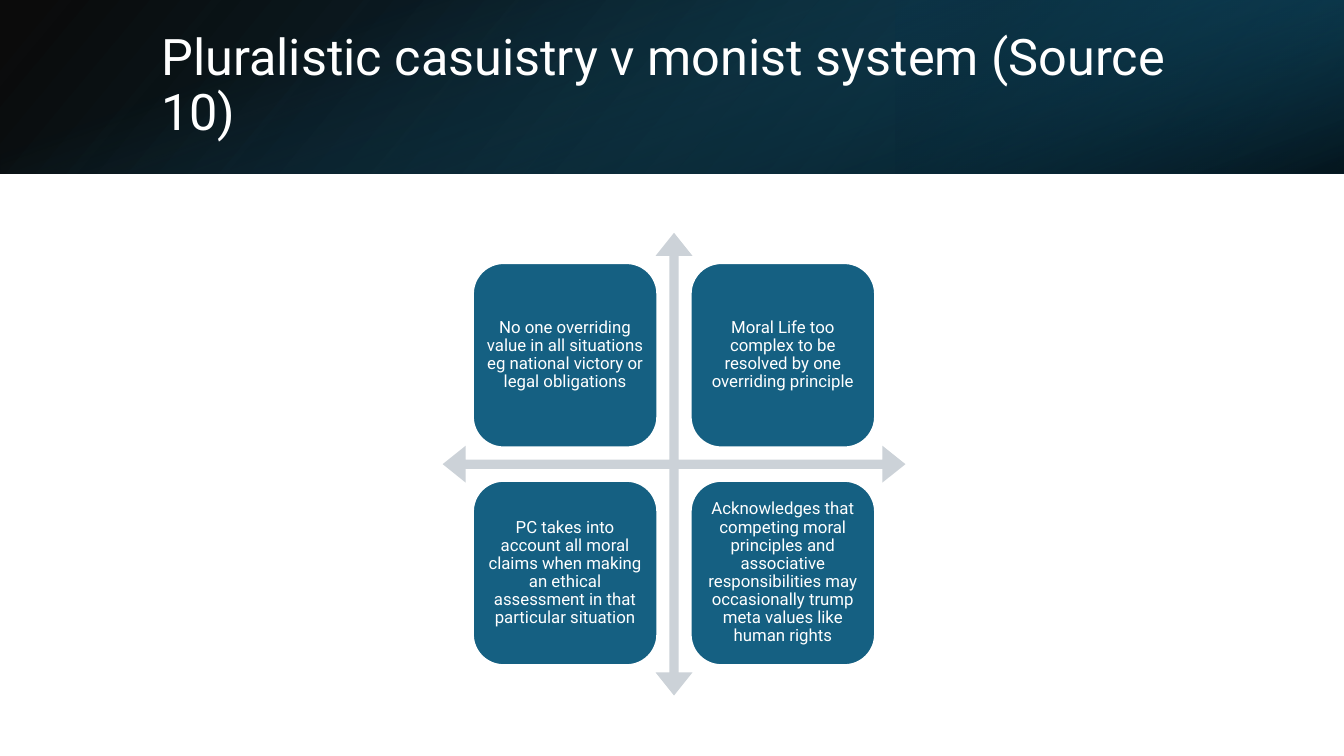
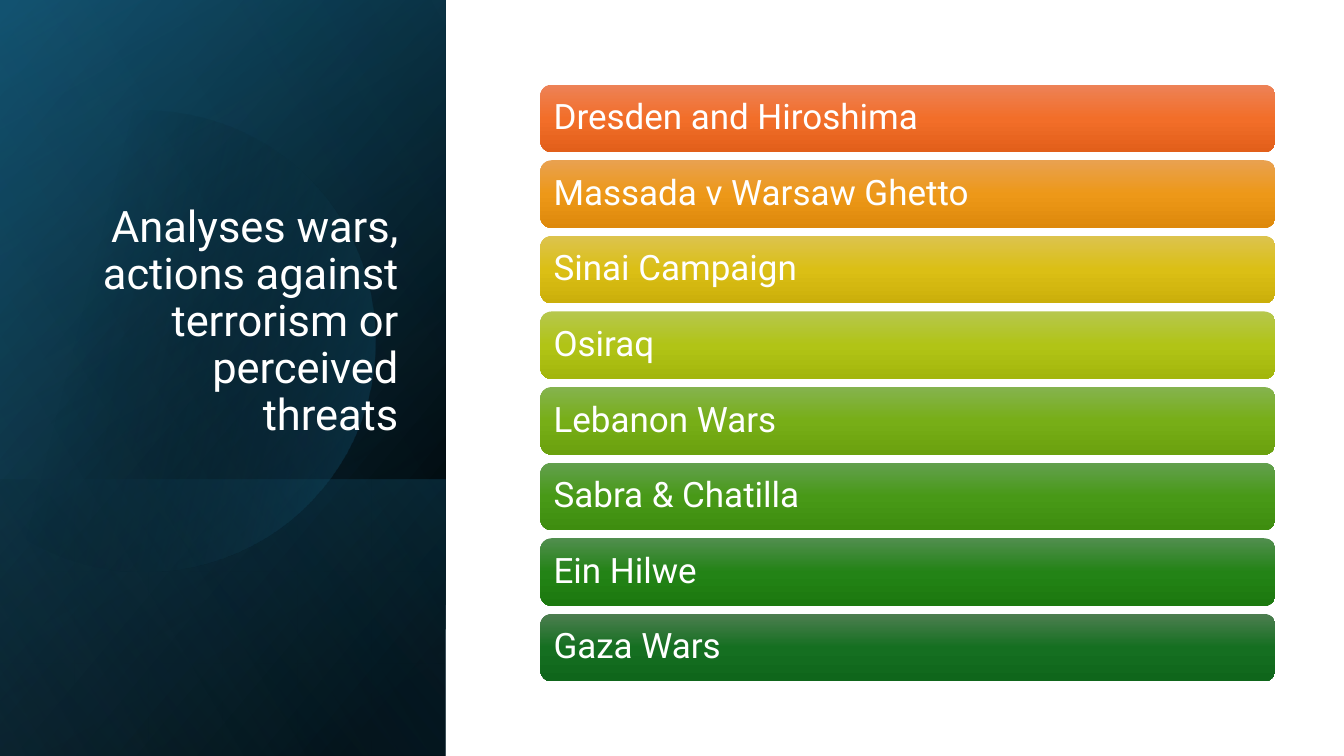
import pptx
import pptx.dml.color
import pptx.enum.shapes
import pptx.enum.text
import pptx.oxml
import pptx.oxml.ns
import pptx.util

Inches = pptx.util.Inches
Pt = pptx.util.Pt
PRESET = pptx.enum.shapes.MSO_SHAPE
ALIGN = pptx.enum.text.PP_ALIGN
ANCHOR = pptx.enum.text.MSO_ANCHOR

# Shared look
SLIDE_W, SLIDE_H = 13.33, 7.5
FONT = "Roboto"
WHITE, BLACK = "FFFFFF", "000000"
TEAL, DEEP_TEAL, NIGHT, SKY = "156082", "104862", "0B3041", "46B1E1"
ARROW_GREY = "CCD2D8"
TITLE_ONLY = 5


def rgb(hex_color):
    return pptx.dml.color.RGBColor.from_string(hex_color)


def apply_gradient(shape, stops, angle):
    """Fill with stops of (position %, colour[, opacity %])."""
    stops_xml = ""
    for position, color, *opacity in stops:
        alpha = f'<a:alpha val="{opacity[0] * 1000}"/>' if opacity else ""
        stops_xml += (f'<a:gs pos="{position * 1000}">'
                      f'<a:srgbClr val="{color}">{alpha}</a:srgbClr></a:gs>')
    gradient = pptx.oxml.parse_xml(
        f'<a:gradFill {pptx.oxml.ns.nsdecls("a")}><a:gsLst>{stops_xml}</a:gsLst>'
        f'<a:lin ang="{angle * 60000}" scaled="0"/></a:gradFill>')
    shape.fill.background()
    properties = shape.element.spPr
    properties.replace(properties.find(pptx.oxml.ns.qn("a:noFill")), gradient)


def strip_style(shape):
    shape.shadow.inherit = False
    shape.line.fill.background()


def add_preset(slide, preset, box):
    shape = slide.shapes.add_shape(preset, *map(Inches, box))
    strip_style(shape)
    return shape


def add_panel(slide, box, stops, angle, turn=0, flip=True):
    """Gradient rectangle covering box once it has been turned."""
    left, top, width, height = box
    if turn == 90:
        center_x, center_y = left + width / 2, top + height / 2
        width, height = height, width
        left, top = center_x - width / 2, center_y - height / 2
    panel = add_preset(slide, PRESET.RECTANGLE, (left, top, width, height))
    panel.rotation = turn
    if flip:
        panel.element.spPr.xfrm.set("flipH", "1")
    apply_gradient(panel, stops, angle)


def set_text(shape, text, size, align, anchor, inset=0.1):
    frame = shape.text_frame
    frame.text = text
    paragraph = frame.paragraphs[0]
    margins = dict.fromkeys(
        ("margin_left", "margin_top", "margin_right", "margin_bottom"), Inches(inset))
    formats = (
        (frame, {"word_wrap": True, "vertical_anchor": anchor,
                 "auto_size": pptx.enum.text.MSO_AUTO_SIZE.NONE, **margins}),
        (paragraph, {"alignment": align, "line_spacing": 0.9}),
        (paragraph.runs[0].font, {"name": FONT, "size": Pt(size)}),
    )
    for target, values in formats:
        for attribute, value in values.items():
            setattr(target, attribute, value)
    paragraph.runs[0].font.color.rgb = rgb(WHITE)


def place_title(slide, box, text, size, align, anchor):
    title = slide.shapes.title
    title.left, title.top, title.width, title.height = map(Inches, box)
    set_text(title, text, size, align, anchor)
    # Bring the title in front of the panels
    title.element.getparent().append(title.element)


def bezier_points(start, curve, steps=24):
    """Points along a cubic curve, without its start."""
    anchors = (start, *curve)
    points = []
    for step in range(1, steps + 1):
        t = step / steps
        weights = ((1 - t) ** 3, 3 * t * (1 - t) ** 2, 3 * t * t * (1 - t), t ** 3)
        points.append(tuple(sum(w * p[axis] for w, p in zip(weights, anchors))
                            for axis in (0, 1)))
    return points


def add_glow_disc(slide, box):
    """Soft disc cut off at the left edge of its panel."""
    left, top = box[:2]
    segments = (
        ((2.46, 1.12), (3.35, 1.77), (3.63, 2.75)),
        ((3.98, 3.97), (3.28, 5.23), (2.07, 5.58)),
        ((1.31, 5.8), (0.53, 5.61), (-0.03, 5.14)),
        ((-0.15, 5.03),),
        ((-0.15, 1.75),),
        ((0, 1.61),),
        ((0.23, 1.42), (0.5, 1.28), (0.8, 1.19)),
        ((1.03, 1.13), (1.26, 1.1), (1.49, 1.1)),
    )
    outline = [(1.49, 1.1)]
    for segment in segments:
        outline += bezier_points(outline[-1], segment) if len(segment) == 3 else segment
    points = [(Inches(left + x), Inches(top + y)) for x, y in outline]
    builder = slide.shapes.build_freeform(*points[0], scale=1.0)
    builder.add_line_segments(points[1:], close=True)
    disc = builder.convert_to_shape()
    strip_style(disc)
    apply_gradient(disc, [(29, BLACK, 0), (100, TEAL, 43)], 14)


def top_band(slide, box):
    left, top, width, height = box
    add_panel(slide, box, [(0, BLACK, 96), (100, DEEP_TEAL)], 140)
    add_panel(slide, (left + width * 2 / 3, top, width / 3, height),
              [(19, NIGHT, 68), (100, TEAL, 79)], 320, turn=180)
    add_panel(slide, box, [(23, TEAL, 0), (99, BLACK, 74)], 340, turn=90, flip=False)


def side_band(slide, box):
    left, top, width, height = box
    foot = 2.74
    add_panel(slide, box, [(8, BLACK), (100, DEEP_TEAL)], 50, turn=90)
    add_panel(slide, box, [(0, BLACK, 0), (99, TEAL, 46)], 30, turn=90)
    add_panel(slide, (left, top + height - foot, width, foot),
              [(2, TEAL, 29), (100, BLACK, 30)], 130, turn=90)
    add_glow_disc(slide, box)
    add_panel(slide, box, [(0, BLACK, 0), (99, SKY, 11)], 120, turn=90)


def quadrant_matrix(slide, box, statements):
    """Four cards around a four-way arrow."""
    left, top, width, height = box
    arrow = add_preset(slide, PRESET.QUAD_ARROW, box)
    for index, value in enumerate((0.02, 0.04, 0.05)):
        arrow.adjustments[index] = value
    arrow.fill.solid()
    arrow.fill.fore_color.rgb = rgb(ARROW_GREY)

    margin, card_size = 0.3, 1.83
    pitch = width - 2 * margin - card_size
    for index, statement in enumerate(statements):
        row, column = divmod(index, 2)
        card = add_preset(slide, PRESET.ROUNDED_RECTANGLE,
                          (left + margin + column * pitch,
                           top + margin + row * pitch, card_size, card_size))
        card.fill.solid()
        card.fill.fore_color.rgb = rgb(TEAL)
        card.line.color.rgb = rgb(WHITE)
        card.line.width = Pt(1.5)
        set_text(card, statement, 12, ALIGN.CENTER, ANCHOR.MIDDLE, inset=0.05)


def bar_list(slide, box, bars):
    """Equal bars stacked down the box."""
    left, top, width, height = box
    bar_height = 0.67
    pitch = (height - bar_height) / (len(bars) - 1)
    for index, (label, colors) in enumerate(bars):
        bar = add_preset(slide, PRESET.ROUNDED_RECTANGLE,
                         (left, top + index * pitch, width, bar_height))
        apply_gradient(bar, list(zip((0, 50, 100), colors)), 90)
        set_text(bar, label, 25, ALIGN.LEFT, ANCHOR.MIDDLE)


def casuistry_slide(deck):
    slide = deck.slides.add_slide(deck.slide_layouts[TITLE_ONLY])
    top_band(slide, (0, 0, SLIDE_W, 1.72))
    place_title(slide, (1.5, 0.38, 10.98, 0.96),
                "Pluralistic casuistry v monist system (Source 10)",
                36, ALIGN.LEFT, ANCHOR.MIDDLE)
    quadrant_matrix(slide, (4.39, 2.31, 4.59, 4.59), (
        "No one overriding value in all situations eg national victory or legal obligations",
        "Moral Life too complex to be resolved by one overriding principle",
        "PC takes into account all moral claims when making an ethical assessment "
        "in that particular situation",
        "Acknowledges that competing moral principles and associative responsibilities "
        "may occasionally trump meta values like human rights",
    ))


def wars_slide(deck):
    slide = deck.slides.add_slide(deck.slide_layouts[TITLE_ONLY])
    side_band(slide, (0, 0, 4.42, SLIDE_H))
    place_title(slide, (0.64, 1.84, 3.41, 2.62),
                "Analyses wars, actions against terrorism or perceived threats",
                31, ALIGN.RIGHT, ANCHOR.BOTTOM)
    bar_list(slide, (5.36, 0.84, 7.29, 5.92), (
        ("Dresden and Hiroshima", ("ED8257", "F26E29", "E25F1A")),
        ("Massada v Warsaw Ghetto", ("E9A150", "ED9818", "DE890B")),
        ("Sinai Campaign", ("DCC34E", "DBBF15", "CBAF0A")),
        ("Osiraq", ("B6C74E", "B1C416", "A3B60C")),
        ("Lebanon Wars", ("85B34E", "77AE17", "6BA10E")),
        ("Sabra & Chatilla", ("63A04E", "489917", "3E8D0F")),
        ("Ein Hilwe", ("518E4E", "238316", "1C790F")),
        ("Gaza Wars", ("4D7E50", "156F21", "0F661B")),
    ))


def main():
    deck = pptx.Presentation()
    deck.slide_width, deck.slide_height = Inches(SLIDE_W), Inches(SLIDE_H)
    casuistry_slide(deck)
    wars_slide(deck)
    deck.save("out.pptx")


if __name__ == "__main__":
    main()
